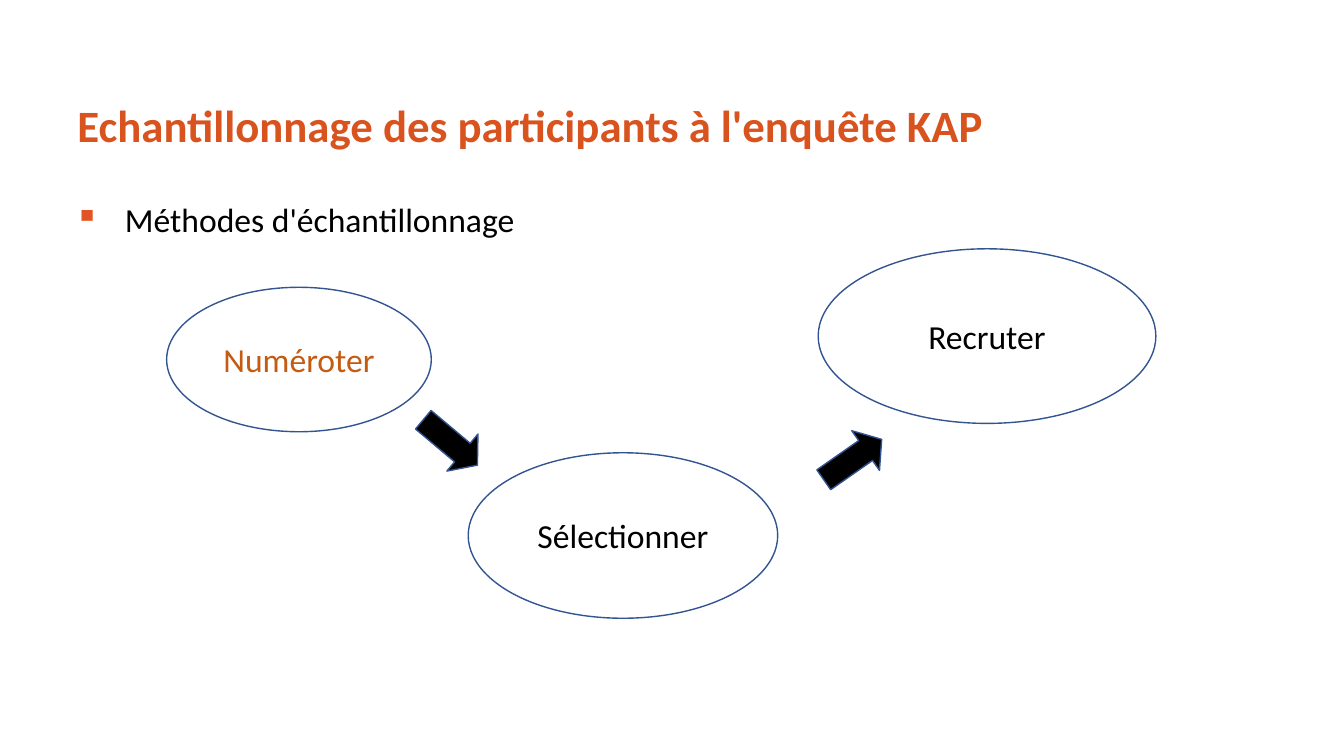
from lxml import etree
from pptx import Presentation
from pptx.dml.color import RGBColor
from pptx.enum.shapes import MSO_SHAPE as Preset
from pptx.enum.text import MSO_ANCHOR as Anchor, PP_ALIGN as Align
from pptx.oxml.ns import qn
from pptx.util import Cm, Pt

ORANGE = RGBColor(0xD9, 0x53, 0x1E)
BROWN = RGBColor(0xC5, 0x5A, 0x11)
BLUE = RGBColor(0x32, 0x54, 0x91)
BLACK = RGBColor(0, 0, 0)
WHITE = RGBColor(0xFF, 0xFF, 0xFF)
BULLET_COLOR = "E25423"


def write(shape, text, size, color, bold=False):
    shape.text_frame.word_wrap = True
    paragraph = shape.text_frame.paragraphs[0]
    paragraph.text = text
    paragraph.font.name = "Calibri"
    paragraph.font.size = Pt(size)
    paragraph.font.bold = bold
    paragraph.font.color.rgb = color
    return paragraph


def add_figure(preset, left, top, width, height, fill):
    shape = slide.shapes.add_shape(preset, Cm(left), Cm(top), Cm(width), Cm(height))
    shape.shadow.inherit = False
    shape.fill.solid()
    shape.fill.fore_color.rgb = fill
    shape.line.color.rgb = BLUE
    shape.line.width = Pt(1)
    return shape


presentation = Presentation()
presentation.slide_width = Cm(33.87)
presentation.slide_height = Cm(19.05)
slide = presentation.slides.add_slide(presentation.slide_layouts[6])

title = slide.shapes.add_textbox(Cm(1.7), Cm(0.76), Cm(30.48), Cm(3.18))
title.text_frame.vertical_anchor = Anchor.BOTTOM
heading = write(title, "Echantillonnage des participants à l'enquête KAP", 32, ORANGE, True)
heading.line_spacing = Pt(40)

steps = [
    ("Numéroter", 4.2, 7.24, 6.67, 3.64, BROWN),
    ("Sélectionner", 11.8, 11.41, 7.8, 4.17, BLACK),
    ("Recruter", 20.62, 6.27, 8.51, 4.4, BLACK),
]
for label, left, top, width, height, color in steps:
    ellipse = add_figure(Preset.OVAL, left, top, width, height, WHITE)
    ellipse.text_frame.vertical_anchor = Anchor.MIDDLE
    write(ellipse, label, 24, color).alignment = Align.CENTER

for left, top, angle in [(10.46, 10.54, 40), (20.6, 10.97, 325.1)]:
    arrow = add_figure(Preset.RIGHT_ARROW, left, top, 1.78, 1.22, BLACK)
    arrow.adjustments[1] = 0.404
    arrow.rotation = angle

methods = slide.shapes.add_textbox(Cm(1.63), Cm(5), Cm(12.04), Cm(1.17))
properties = methods.text_frame.paragraphs[0]._p.get_or_add_pPr()
properties.set("marL", str(Cm(1.27)))
properties.set("indent", str(Cm(-1.27)))
bullet_color = etree.SubElement(properties, qn("a:buClr"))
etree.SubElement(bullet_color, qn("a:srgbClr"), val=BULLET_COLOR)
etree.SubElement(properties, qn("a:buChar"), char="▪")
write(methods, "Méthodes d'échantillonnage", 24, BLACK).line_spacing = 0.9

presentation.save("out.pptx")
